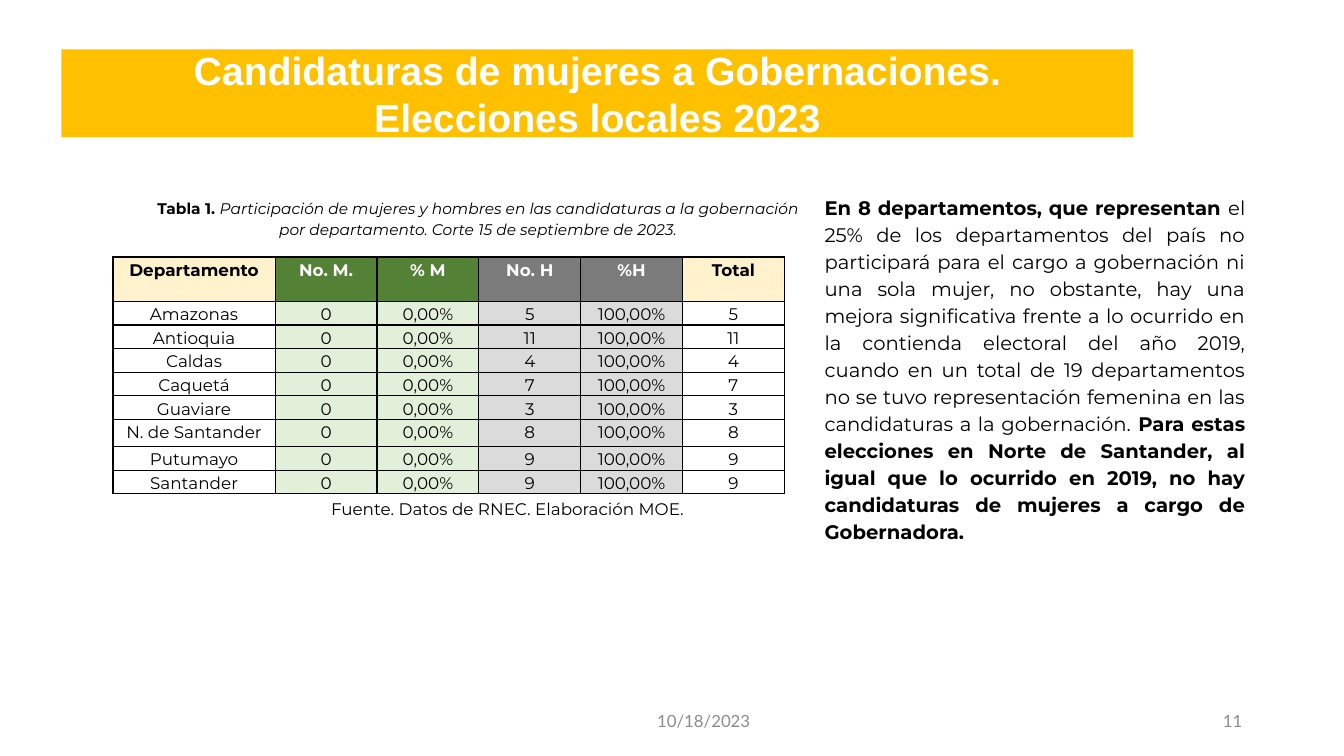
from lxml import etree
from pptx import Presentation
from pptx import util as u
from pptx.dml import color
from pptx.enum import text
from pptx.oxml import ns, parse_xml

THEME = {
    "title_font": "Arial", "body_font": "Montserrat", "footer_font": "Lato",
    "title": 28, "body": 14, "table": 12, "caption": 11, "footer": 12,
    "black": "000000", "white": "FFFFFF", "grey": "8C8C8C", "gold": "FFC000",
    "cream": "FFF2CC", "green": "538135", "pale_green": "E2EFD9",
    "dark_grey": "7B7B7B", "pale_grey": "DBDBDB",
}
LEFT, CENTER, RIGHT, JUSTIFY = (
    text.PP_ALIGN.LEFT, text.PP_ALIGN.CENTER, text.PP_ALIGN.RIGHT, text.PP_ALIGN.JUSTIFY)
TOP, MIDDLE = text.MSO_ANCHOR.TOP, text.MSO_ANCHOR.MIDDLE


def write(frame, spans, size="table", font="body_font", ink="black",
          align=CENTER, spacing=1.15, anchor=TOP, fit=text.MSO_AUTO_SIZE.NONE):
    frame.word_wrap = True
    frame.auto_size = fit
    frame.vertical_anchor = anchor
    para = frame.paragraphs[0]
    para.alignment = align
    para.line_spacing = spacing
    for words, bold, italic in spans:
        for number, line in enumerate(words.split("\n")):
            if number:
                para.add_line_break()
            span = para.add_run()
            span.text = line
            span.font.name = THEME[font]
            span.font.size = u.Pt(THEME[size])
            span.font.bold = bold
            span.font.italic = italic
            span.font.color.rgb = color.RGBColor.from_string(THEME[ink])


def paint(fill, name):
    fill.solid()
    fill.fore_color.rgb = color.RGBColor.from_string(THEME[name])


deck = Presentation()
deck.slide_width, deck.slide_height = u.Inches(13.33), u.Inches(7.5)
page = deck.slides.add_slide(deck.slide_layouts[5])

title = page.shapes.title
title.left, title.top = u.Inches(0.61), u.Inches(0.49)
title.width, title.height = u.Inches(10.63), u.Inches(0.87)
title.element.spPr.append(parse_xml(
    f'<a:prstGeom {ns.nsdecls("a")} prst="roundRect"><a:avLst>'
    '<a:gd name="adj" fmla="val 16667"/></a:avLst></a:prstGeom>'))
paint(title.fill, "gold")
write(title.text_frame,
      [("Candidaturas de mujeres a Gobernaciones.\nElecciones locales 2023", True, False)],
      size="title", font="title_font", ink="white", spacing=1.0, anchor=MIDDLE)

header = ["Departamento", "No. M.", "% M", "No. H", "%H", "Total"]
header_fills = ["cream", "green", "green", "dark_grey", "dark_grey", "cream"]
header_inks = ["black", "white", "white", "white", "white", "black"]
body_fills = ["white", "pale_green", "pale_green", "pale_grey", "pale_grey", "white"]
men_candidates = {
    "Amazonas": 5, "Antioquia": 11, "Caldas": 4, "Caquetá": 7,
    "Guaviare": 3, "N. de Santander": 8, "Putumayo": 9, "Santander": 9,
}
rows = [header] + [
    [department, "0", "0,00%", str(men), "100,00%", str(men)]
    for department, men in men_candidates.items()]

table = page.shapes.add_table(
    len(rows), len(header), u.Inches(1.12), u.Inches(2.55),
    u.Inches(6.66), u.Inches(2.32)).table
table.first_row = table.horz_banding = False
for index, column in enumerate(table.columns):
    column.width = u.Inches(1.01 if index else 1.61)
for row_index, values in enumerate(rows):
    is_header = row_index == 0
    tall = 0.44 if is_header else 0.27 if values[0] == "N. de Santander" else 0.23
    table.rows[row_index].height = u.Inches(tall)
    for column_index, value in enumerate(values):
        cell = table.cell(row_index, column_index)
        cell.margin_left = cell.margin_right = cell.margin_top = cell.margin_bottom = 0
        properties = cell._tc.get_or_add_tcPr()
        for side in ("a:lnL", "a:lnR", "a:lnT", "a:lnB"):
            border = etree.SubElement(properties, ns.qn(side), w=str(u.Pt(1)))
            line_fill = etree.SubElement(border, ns.qn("a:solidFill"))
            etree.SubElement(line_fill, ns.qn("a:srgbClr"), val=THEME["black"])
        paint(cell.fill, (header_fills if is_header else body_fills)[column_index])
        write(cell.text_frame, [(value, is_header, False)],
              ink=header_inks[column_index] if is_header else "black")

grow = {"fit": text.MSO_AUTO_SIZE.SHAPE_TO_FIT_TEXT}
footer = {"size": "footer", "font": "footer_font", "ink": "grey",
          "spacing": 1.0, "anchor": MIDDLE}
text_boxes = [
    ((8.08, 1.86, 4.37, 3.6), [
        ("En 8 departamentos, que representan ", True, False),
        ("el 25% de los departamentos del país no participará para el cargo a "
         "gobernación ni una sola mujer, no obstante, hay una mejora significativa "
         "frente a lo ocurrido en la contienda electoral del año 2019, cuando en un "
         "total de 19 departamentos no se tuvo representación femenina en las "
         "candidaturas a la gobernación.", False, False),
        (" Para estas elecciones en Norte de Santander, al igual que lo ocurrido en "
         "2019, no hay candidaturas de mujeres a cargo de Gobernadora.", True, False),
    ], {"size": "body", "align": JUSTIFY, **grow}),
    ((1.41, 1.9, 6.67, 0.51), [
        ("Tabla 1. ", True, False),
        ("Participación de mujeres y hombres en las candidaturas a la gobernación "
         "por departamento. Corte 15 de septiembre de 2023.", False, True),
    ], {"size": "caption", **grow}),
    ((1.7, 4.87, 6.67, 0.32),
     [("Fuente. Datos de RNEC. Elaboración MOE.", False, False)], grow),
    ((6.42, 6.95, 3, 0.4), [("10/18/2023", False, False)], {"align": LEFT, **footer}),
    ((9.42, 6.95, 3, 0.4), [("11", False, False)], {"align": RIGHT, **footer}),
]
for place, spans, style in text_boxes:
    box = page.shapes.add_textbox(*map(u.Inches, place))
    write(box.text_frame, spans, **style)

deck.save("out.pptx")
